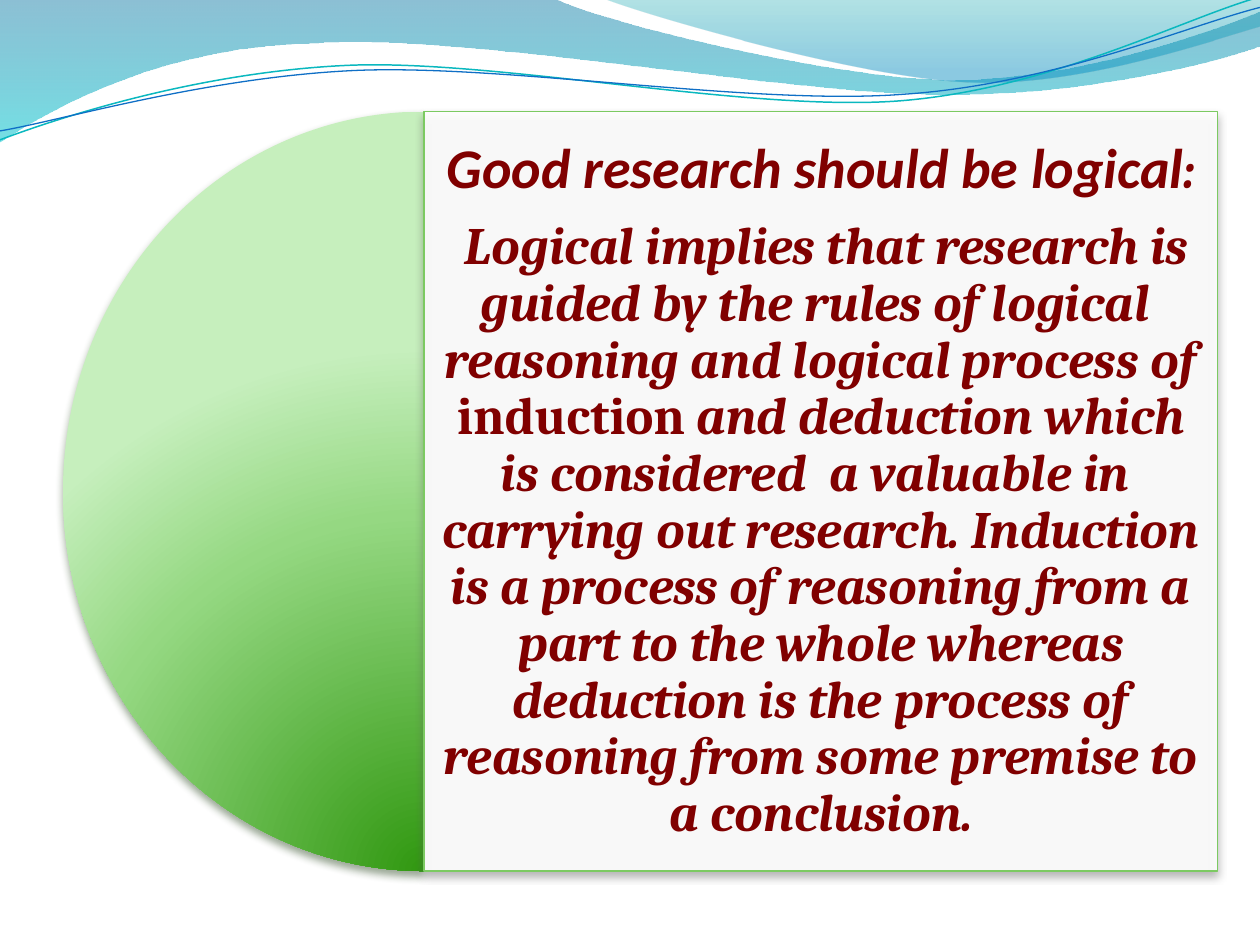
from dataclasses import dataclass
from typing import Optional

import pptx
import pptx.dml.color
import pptx.enum.shapes
import pptx.enum.text
import pptx.oxml
import pptx.oxml.ns
import pptx.util

Cm = pptx.util.Cm
Pt = pptx.util.Pt
Point = tuple[float, float]


@dataclass(frozen=True)
class Theme:
    text: str = "800000"
    panel: str = "FFFFFF"
    panel_border: str = "7CCA62"
    panel_shadow: str = "5A5A5A"
    pie_shadow: str = "2B4821"
    heading_font: str = "Calibri"
    body_font: str = "Cambria"
    heading_size: int = 32
    body_size: int = 30


@dataclass(frozen=True)
class Stop:
    position: int
    color: str
    opacity: int = 100


@dataclass(frozen=True)
class Wave:
    """Outline in cm: one-point steps are straight, three-point steps are Bézier curves."""
    start: Point
    steps: tuple[tuple[Point, ...], ...]
    stops: tuple[Stop, ...] = ()
    line_color: Optional[str] = None
    line_width: float = 0.75
    rotation: float = 0


@dataclass(frozen=True)
class Box:
    left: float
    top: float
    width: float
    height: float

    def lengths(self) -> tuple:
        return Cm(self.left), Cm(self.top), Cm(self.width), Cm(self.height)


THEME = Theme()
PIE_BOX = Box(1.27, 2.25, 14.55, 15.31)
PANEL_BOX = Box(8.55, 2.25, 16, 15.31)
DOWNWARD = '<a:lin ang="5400000" scaled="0"/>'
FROM_BELOW = ('<a:path path="circle"><a:fillToRect l="50000" t="130000" '
              'r="50000" b="-30000"/></a:path>')
PIE_STOPS = (Stop(0, "319811"), Stop(68, "95D882"), Stop(100, "C6EFBD"))

WAVES = (
    Wave((0, 0), (
        ((11.18, -0.03),),
        ((12.09, 0.43), (16.87, 1.6), (19.25, 1.6)),
        ((21.67, 1.6), (24.33, 0.66), (25.4, 0.23)),
        ((25.43, 0.91),),
        ((24.97, 1.12), (22.1, 1.93), (18.95, 1.9)),
        ((15.8, 1.9), (9.7, 0.71), (6.53, 0.86)),
        ((3.28, 0.91), (1.17, 2.11), (-0.03, 2.87)),
        ((0, 0),),
    ), stops=(Stop(0, "0074A1", 45), Stop(100, "00C6CF", 55))),
    Wave((12.17, -0.03), (
        ((12.93, 0.28), (17.32, 1.57), (19.53, 1.65)),
        ((21.74, 1.75), (24.41, 0.81), (25.4, 0.53)),
        ((25.4, 0),),
        ((12.17, -0.03),),
    ), stops=(Stop(0, "00A1A9", 30), Stop(80, "008BBF", 45))),
    Wave((-0.05, 2.22), (
        ((1.19, 1.82), (4.02, 1.04), (7.05, 1.05)),
        ((10.05, 1.07), (15.02, 2.37), (18.08, 2.29)),
        ((21.13, 2.2), (23.87, 0.91), (25.41, 0.55)),
    ), line_color="0AB8BF", line_width=0.85, rotation=357.3),
    Wave((-0.04, 2.04), (
        ((1.16, 1.9), (4.18, 1.15), (7.2, 1.16)),
        ((10.25, 1.18), (15.13, 2.25), (18.19, 2.16)),
        ((21.21, 2.1), (23.93, 1.06), (25.45, 0.75)),
    ), line_color="0F6FC6", rotation=357.3),
)

HEADING = "Good research should be logical"
BODY = (
    (" Logical implies that research is guided by the rules of logical  reasoning "
     "and logical process of ", True),
    ("induction", False),
    (" and deduction which is considered  a valuable in  carrying out research. "
     "Induction is a process of reasoning from a part to the whole whereas deduction "
     "is the process of reasoning from some premise to a conclusion.", True),
)


def rgb(color: str) -> pptx.dml.color.RGBColor:
    return pptx.dml.color.RGBColor.from_string(color)


def color_xml(color: str, opacity: int) -> str:
    return f'<a:srgbClr val="{color}"><a:alpha val="{opacity * 1000}"/></a:srgbClr>'


def set_gradient(shape, stops: tuple[Stop, ...], direction: str) -> None:
    shape.fill.gradient()
    gradient = shape.element.spPr.find(pptx.oxml.ns.qn("a:gradFill"))
    stops_xml = "".join(f'<a:gs pos="{stop.position * 1000}">'
                        f'{color_xml(stop.color, stop.opacity)}</a:gs>' for stop in stops)
    gradient.getparent().replace(gradient, pptx.oxml.parse_xml(
        f'<a:gradFill {pptx.oxml.ns.nsdecls("a")} rotWithShape="1">'
        f'<a:gsLst>{stops_xml}</a:gsLst>{direction}</a:gradFill>'))


def set_shadow(shape, color: str) -> None:
    shape.shadow.inherit = False
    effects = shape.element.spPr.find(pptx.oxml.ns.qn("a:effectLst"))
    effects.append(pptx.oxml.parse_xml(
        f'<a:outerShdw {pptx.oxml.ns.nsdecls("a")} blurRad="{Pt(4.5)}" dist="{Pt(3)}" '
        f'dir="5400000" rotWithShape="0">{color_xml(color, 48)}</a:outerShdw>'))


def bend_segments(shape, steps: tuple[tuple[Point, ...], ...]) -> None:
    """Merge the three straight segments of each curved step into one Bézier segment."""
    segments = iter(list(shape.element.spPr.iter(pptx.oxml.ns.qn("a:lnTo"))))
    for step in steps:
        parts = [next(segments) for _ in step]
        if len(parts) == 3:
            curve = pptx.oxml.parse_xml(f'<a:cubicBezTo {pptx.oxml.ns.nsdecls("a")}/>')
            parts[0].addprevious(curve)
            for part in parts:
                curve.append(part[0])
                part.getparent().remove(part)


def draw_wave(slide, wave: Wave) -> None:
    builder = slide.shapes.build_freeform(Cm(wave.start[0]), Cm(wave.start[1]))
    builder.add_line_segments([(Cm(x), Cm(y)) for step in wave.steps for x, y in step],
                              close=bool(wave.stops))
    shape = builder.convert_to_shape()
    bend_segments(shape, wave.steps)
    shape.rotation = wave.rotation
    shape.shadow.inherit = False
    if wave.stops:
        set_gradient(shape, wave.stops, DOWNWARD)
        shape.line.fill.background()
    else:
        shape.fill.background()
        shape.line.color.rgb = rgb(wave.line_color)
        shape.line.width = Pt(wave.line_width)


def draw_half_disc(slide) -> None:
    pie = slide.shapes.add_shape(pptx.enum.shapes.MSO_SHAPE.PIE, *PIE_BOX.lengths())
    pie.adjustments[0], pie.adjustments[1] = 54, 162
    set_gradient(pie, PIE_STOPS, FROM_BELOW)
    pie.line.fill.background()
    set_shadow(pie, THEME.pie_shadow)


def draw_panel(slide) -> None:
    panel = slide.shapes.add_shape(pptx.enum.shapes.MSO_SHAPE.RECTANGLE, *PANEL_BOX.lengths())
    panel.fill.solid()
    panel.fill.fore_color.rgb = rgb(THEME.panel)
    fill_color = panel.element.spPr.find(pptx.oxml.ns.qn("a:solidFill"))[0]
    fill_color.append(pptx.oxml.parse_xml(
        f'<a:alpha {pptx.oxml.ns.nsdecls("a")} val="90000"/>'))
    panel.line.color.rgb = rgb(THEME.panel_border)
    panel.line.width = Pt(0.75)
    set_shadow(panel, THEME.panel_shadow)


def add_run(paragraph, text: str, font: str, size: int, italic: bool = True) -> None:
    run = paragraph.add_run()
    run.text = text
    run.font.name = font
    run.font.size = Pt(size)
    run.font.italic = italic
    run.font.bold = True
    run.font.color.rgb = rgb(THEME.text)


def write_text(slide) -> None:
    frame = slide.shapes.add_textbox(*PANEL_BOX.lengths()).text_frame
    frame.word_wrap = True
    frame.vertical_anchor = pptx.enum.text.MSO_ANCHOR.MIDDLE
    frame.margin_left = frame.margin_right = frame.margin_top = frame.margin_bottom = Cm(0.33)
    heading, body = frame.paragraphs[0], frame.add_paragraph()
    for paragraph in (heading, body):
        paragraph.alignment = pptx.enum.text.PP_ALIGN.CENTER
        paragraph.line_spacing = 0.9
        paragraph.space_after = Pt(11)
    add_run(heading, HEADING, THEME.heading_font, THEME.heading_size)
    add_run(heading, ":", THEME.body_font, THEME.body_size)
    for text, italic in BODY:
        add_run(body, text, THEME.body_font, THEME.body_size, italic)


def main() -> None:
    presentation = pptx.Presentation()
    presentation.slide_width, presentation.slide_height = Cm(25.4), Cm(19.05)
    slide = presentation.slides.add_slide(presentation.slide_layouts.get_by_name("Blank"))
    for wave in WAVES:
        draw_wave(slide, wave)
    draw_half_disc(slide)
    draw_panel(slide)
    write_text(slide)
    presentation.save("out.pptx")


if __name__ == "__main__":
    main()
